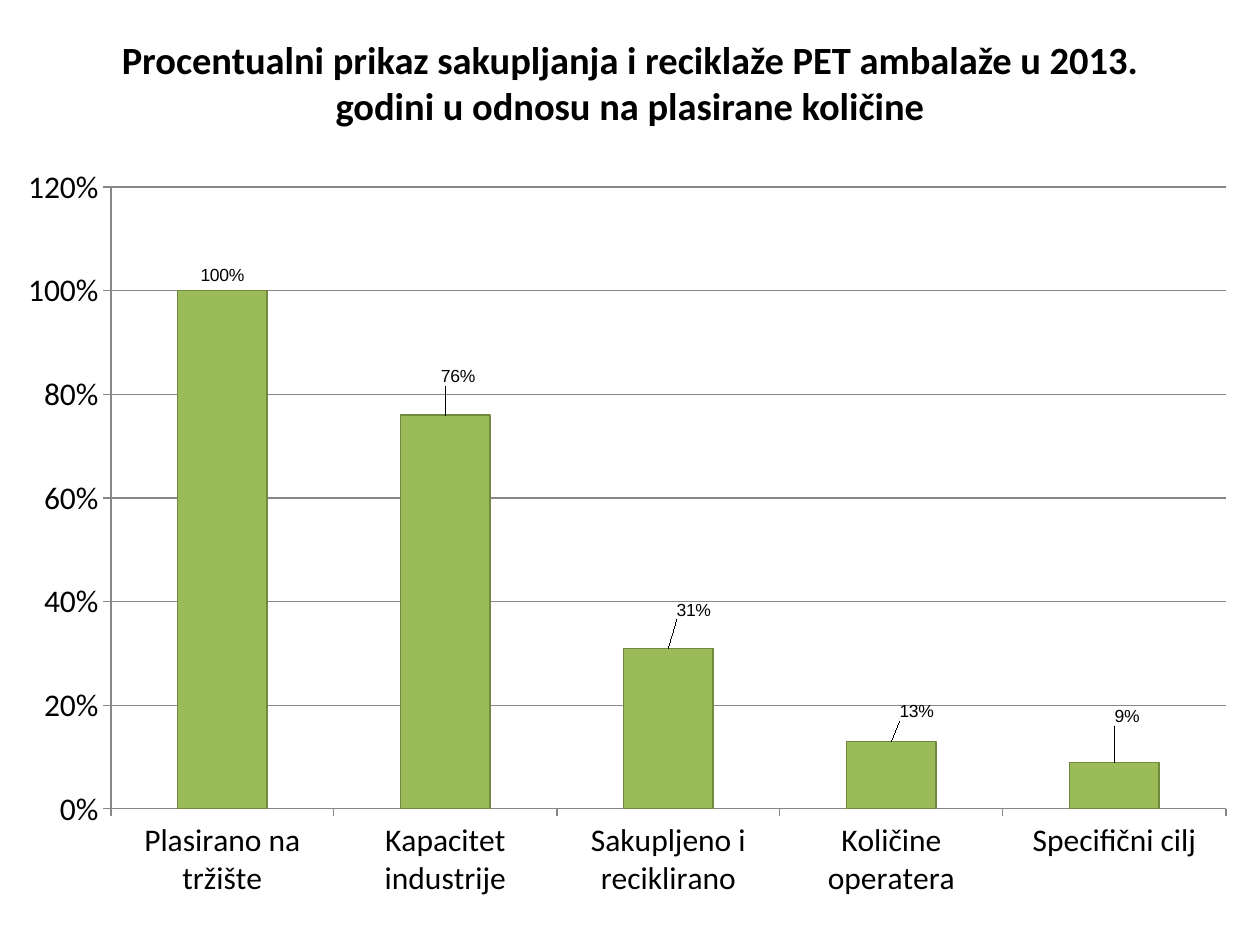
from dataclasses import dataclass

from lxml import etree
from pptx import Presentation
from pptx.chart.data import CategoryChartData
from pptx.dml.color import RGBColor
from pptx.enum.chart import XL_CHART_TYPE, XL_LABEL_POSITION, XL_TICK_MARK
from pptx.enum.text import MSO_ANCHOR, PP_ALIGN
from pptx.oxml.ns import qn
from pptx.util import Cm, Pt

COLUMNS = XL_CHART_TYPE.COLUMN_CLUSTERED
OUTSIDE_END = XL_LABEL_POSITION.OUTSIDE_END
TICK_OUTSIDE = XL_TICK_MARK.OUTSIDE
MIDDLE = MSO_ANCHOR.MIDDLE
CENTER = PP_ALIGN.CENTER


@dataclass(frozen=True)
class Theme:
    font: str = "Calibri"
    label_font: str = "Arial"
    title_size: int = 22
    axis_size: int = 18
    label_size: int = 10
    text: RGBColor = RGBColor(0x00, 0x00, 0x00)
    bar: RGBColor = RGBColor(0x9B, 0xBB, 0x59)
    bar_edge: RGBColor = RGBColor(0x71, 0x89, 0x3F)
    grid: RGBColor = RGBColor(0x86, 0x86, 0x86)


def manual_layout(**settings):
    layout = etree.Element(qn("c:layout"))
    manual = etree.SubElement(layout, qn("c:manualLayout"))
    for name, value in settings.items():
        etree.SubElement(manual, qn(f"c:{name}")).set("val", str(value))
    return layout


class SlideBuilder:
    def __init__(self, slide, theme):
        self.slide = slide
        self.theme = theme

    def style_font(self, font, name, size, bold=False):
        font.name = name
        font.size = Pt(size)
        font.bold = bold
        font.color.rgb = self.theme.text

    def style_line(self, line, color):
        line.color.rgb = color
        line.width = Pt(0.75)

    def title(self, wording, left, top, width, height):
        heading = self.slide.shapes.title
        heading.left, heading.top = Cm(left), Cm(top)
        heading.width, heading.height = Cm(width), Cm(height)
        frame = heading.text_frame
        frame.word_wrap = True
        frame.vertical_anchor = MIDDLE
        paragraph = frame.paragraphs[0]
        paragraph.alignment = CENTER
        run = paragraph.add_run()
        run.text = wording
        self.style_font(run.font, self.theme.font, self.theme.title_size, True)

    def column_chart(self, shares, label_shifts, left, top, width, height):
        data = CategoryChartData(number_format="0%")
        data.categories = list(shares)
        data.add_series("Series 1", list(shares.values()))
        chart = self.slide.shapes.add_chart(
            COLUMNS, Cm(left), Cm(top), Cm(width), Cm(height), data
        ).chart
        chart.has_title = False
        chart.has_legend = False
        self.style_font(chart.font, self.theme.font, self.theme.axis_size)
        self.axes(chart)
        self.plot_area(chart)

        plot = chart.plots[0]
        plot.gap_width = 150
        plot.vary_by_categories = False
        series = plot.series[0]
        series.format.fill.solid()
        series.format.fill.fore_color.rgb = self.theme.bar
        self.style_line(series.format.line, self.theme.bar_edge)
        for index, shift in enumerate(label_shifts):
            self.value_label(series, index, shift)

    def axes(self, chart):
        for axis in (chart.category_axis, chart.value_axis):
            axis.major_tick_mark = TICK_OUTSIDE
            self.style_line(axis.format.line, self.theme.grid)
        percent = chart.value_axis
        percent.minimum_scale = 0
        percent.maximum_scale = 1.2
        percent.major_unit = 0.2
        percent.tick_labels.number_format = "0%"
        percent.tick_labels.number_format_is_linked = False
        self.style_line(percent.major_gridlines.format.line, self.theme.grid)

    def plot_area(self, chart):
        area = chart.element.find(".//" + qn("c:plotArea"))
        for layout in area.findall(qn("c:layout")):
            area.remove(layout)
        area.insert(0, manual_layout(
            layoutTarget="inner", xMode="edge", yMode="edge",
            x=0.088, y=0.025, w=0.885, h=0.8,
        ))

    def value_label(self, series, index, shift):
        label = series.points[index].data_label
        self.style_font(label.font, self.theme.label_font, self.theme.label_size)
        label.position = OUTSIDE_END
        entry = series.data_labels._element.findall(qn("c:dLbl"))[index]
        x, y = shift
        entry.find(qn("c:idx")).addnext(manual_layout(x=x, y=y))


def main():
    deck = Presentation()
    deck.slide_width, deck.slide_height = Cm(25.4), Cm(19.05)
    slide = deck.slides.add_slide(deck.slide_layouts[5])
    builder = SlideBuilder(slide, Theme())
    builder.title(
        "Procentualni prikaz sakupljanja i reciklaže PET ambalaže u 2013. "
        "godini u odnosu na plasirane količine",
        1.27, 0.67, 22.86, 1.96,
    )
    shares = {
        "Plasirano na tržište": 1,
        "Kapacitet industrije": 0.76,
        "Sakupljeno i reciklirano": 0.31,
        "Količine operatera": 0.13,
        "Specifični cilj": 0.09,
    }
    label_shifts = [(0, 0), (0.01, -0.03), (0.02, -0.03), (0.02, -0.02), (0.01, -0.04)]
    builder.column_chart(shares, label_shifts, 0, 3.38, 25.4, 15.67)
    deck.save("out.pptx")


if __name__ == "__main__":
    main()
